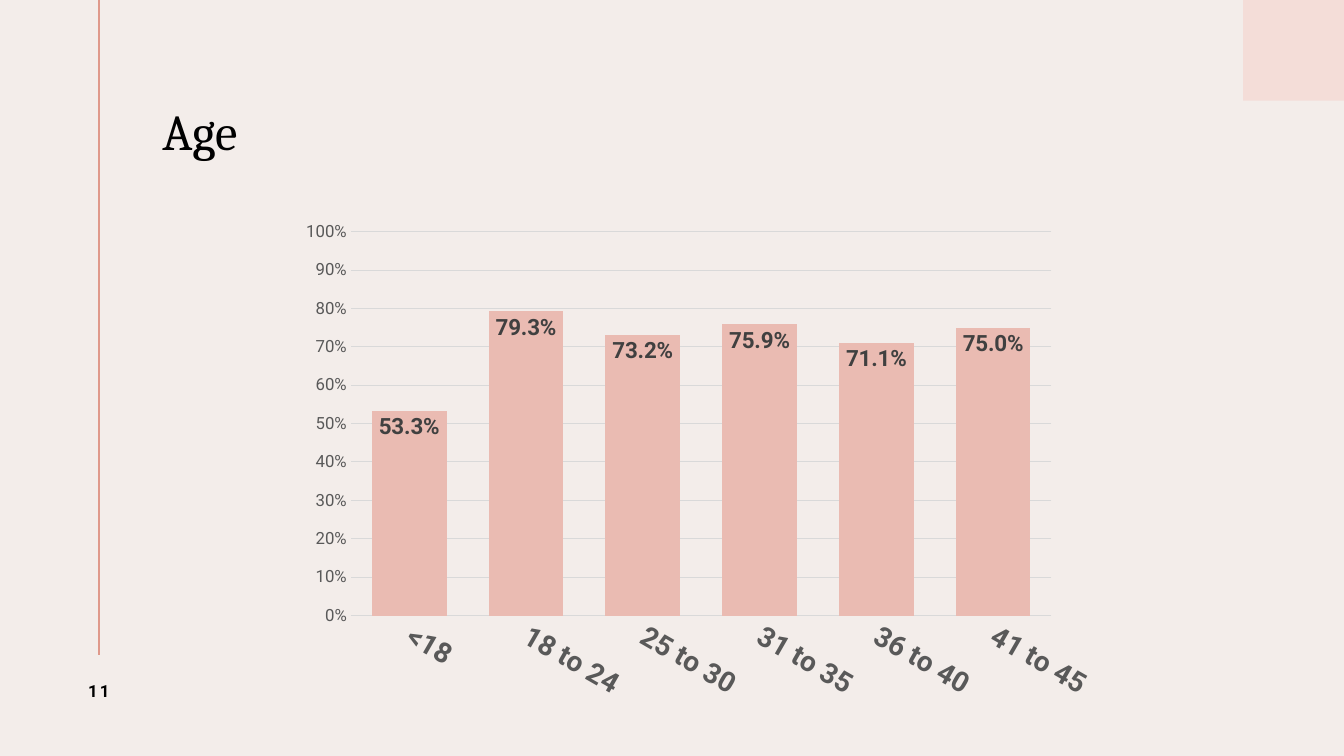
from lxml import etree
from pptx import Presentation
from pptx import util as u
from pptx.chart.data import CategoryChartData
from pptx.dml.color import RGBColor
from pptx.enum import chart as c, shapes, text
from pptx.oxml import parse_xml
from pptx.oxml.ns import nsdecls, qn

TITLE = "Age"
PAGE = "11"
AGE_SHARES = {
    "<18": 0.533,
    "18 to 24": 0.793,
    "25 to 30": 0.732,
    "31 to 35": 0.759,
    "36 to 40": 0.711,
    "41 to 45": 0.75,
}
THEME = {
    "bg": "F3EDEA", "corner": "F4DDD8", "rule": "DF998B", "bar": "EABBB2",
    "grid": "D9D9D9",
    "title": {"name": "Cambria", "size": 36, "color": "000000"},
    "page": {"name": "Roboto", "size": 12, "color": "000000", "bold": True},
    "chart": {"name": "Roboto", "size": 10, "color": "000000"},
    "category": {"name": "Roboto", "size": 20, "color": "595959", "bold": True},
    "value": {"name": "Roboto", "size": 12, "color": "595959", "bold": False},
    "label": {"name": "Roboto", "size": 16, "color": "404040", "bold": True},
}
SLIDE_W, SLIDE_H = 13.33, 7.5
CORNER = 1
RULE_X, RULE_END = 0.98, 6.5
TITLE_BOX = (1.61, 0.55, 10.73, 1.56)
PAGE_BOX = (0.45, RULE_END, 1.06, 0.71)
CHART_BOX = (2.92, 2.11, 8.11, 4.96)
PLOT_BOX = (3.48, 2.3, 6.95, 3.81)
LABEL_ANGLE = 30


def inches(*lengths):
    return [u.Inches(n) for n in lengths]


def rgb(name):
    return RGBColor.from_string(name)


def set_font(font, style):
    for key, value in THEME[style].items():
        if key == "color":
            font.color.rgb = rgb(value)
        else:
            setattr(font, key, u.Pt(value) if key == "size" else value)


def set_line(line, color, width):
    line.color.rgb = rgb(color)
    line.width = u.Pt(width)


def add_text(s, box, words, style, align, left=0.1):
    tf = s.shapes.add_textbox(*inches(*box)).text_frame
    tf.word_wrap = True
    tf.vertical_anchor = text.MSO_ANCHOR.MIDDLE
    tf.margin_left = u.Inches(left)
    p = tf.paragraphs[0]
    p.alignment = align
    r = p.add_run()
    r.text = words
    set_font(r.font, style)
    return p, r


def add_decor(s):
    sp = s.shapes.add_shape(shapes.MSO_SHAPE.RECTANGLE,
                            *inches(SLIDE_W - CORNER, 0, CORNER, CORNER))
    sp.shadow.inherit = False
    sp.fill.solid()
    sp.fill.fore_color.rgb = rgb(THEME["corner"])
    sp.line.fill.background()
    rule = s.shapes.add_connector(shapes.MSO_CONNECTOR.STRAIGHT,
                                  *inches(RULE_X, 0, RULE_X, RULE_END))
    set_line(rule.line, THEME["rule"], 1.5)
    etree.SubElement(rule._element.spPr, qn("a:effectLst"))


def place_plot(chart):
    left, top, width, height = CHART_BOX
    x, y, w, h = PLOT_BOX
    parts = {"x": (x - left) / width, "y": (y - top) / height,
             "w": w / width, "h": h / height}
    modes = "".join(f'<c:{k}Mode val="edge"/>' for k in "xy")
    sizes = "".join(f'<c:{k} val="{v:.3f}"/>' for k, v in parts.items())
    layout = parse_xml(
        f'<c:layout {nsdecls("c")}><c:manualLayout>'
        f'<c:layoutTarget val="inner"/>{modes}{sizes}'
        '</c:manualLayout></c:layout>')
    area = chart._chartSpace.chart.plotArea
    for old in area.findall(qn("c:layout")):
        area.remove(old)
    area.insert(0, layout)


def add_age_chart(s):
    data = CategoryChartData(number_format="0.0%")
    data.categories = list(AGE_SHARES)
    data.add_series("Series 1", list(AGE_SHARES.values()))
    chart = s.shapes.add_chart(c.XL_CHART_TYPE.COLUMN_CLUSTERED,
                               *inches(*CHART_BOX), data).chart
    chart.has_legend = chart.has_title = False
    set_font(chart.font, "chart")
    for axis, style in ((chart.category_axis, "category"),
                        (chart.value_axis, "value")):
        axis.major_tick_mark = axis.minor_tick_mark = c.XL_TICK_MARK.NONE
        set_font(axis.tick_labels.font, style)
    ages, shares = chart.category_axis, chart.value_axis
    set_line(ages.format.line, THEME["grid"], 0.75)
    ages._element.txPr.find(qn("a:bodyPr")).set("rot", str(LABEL_ANGLE * 60000))
    for key, value in {"minimum_scale": 0, "maximum_scale": 1,
                       "major_unit": 0.1, "has_major_gridlines": True}.items():
        setattr(shares, key, value)
    shares.format.line.fill.background()
    set_line(shares.major_gridlines.format.line, THEME["grid"], 0.75)
    shares.tick_labels.number_format = "0%"
    shares.tick_labels.number_format_is_linked = False

    plot = chart.plots[0]
    plot.gap_width = 56
    plot.vary_by_categories = False
    fill = plot.series[0].format.fill
    fill.solid()
    fill.fore_color.rgb = rgb(THEME["bar"])
    labels = plot.series[0].data_labels
    for key, value in {"show_value": True, "number_format": "0.0%",
                       "number_format_is_linked": False,
                       "position": c.XL_LABEL_POSITION.INSIDE_END}.items():
        setattr(labels, key, value)
    set_font(labels.font, "label")
    place_plot(chart)


def main():
    prs = Presentation()
    prs.slide_width, prs.slide_height = inches(SLIDE_W, SLIDE_H)
    s = prs.slides.add_slide(prs.slide_layouts[6])
    s.background.fill.solid()
    s.background.fill.fore_color.rgb = rgb(THEME["bg"])
    add_decor(s)
    p, r = add_text(s, TITLE_BOX, TITLE, "title", text.PP_ALIGN.LEFT, left=0)
    p.line_spacing = 0.9
    p, r = add_text(s, PAGE_BOX, PAGE, "page", text.PP_ALIGN.CENTER)
    r.font._element.set("spc", "150")
    add_age_chart(s)
    prs.save("out.pptx")


if __name__ == "__main__":
    main()
